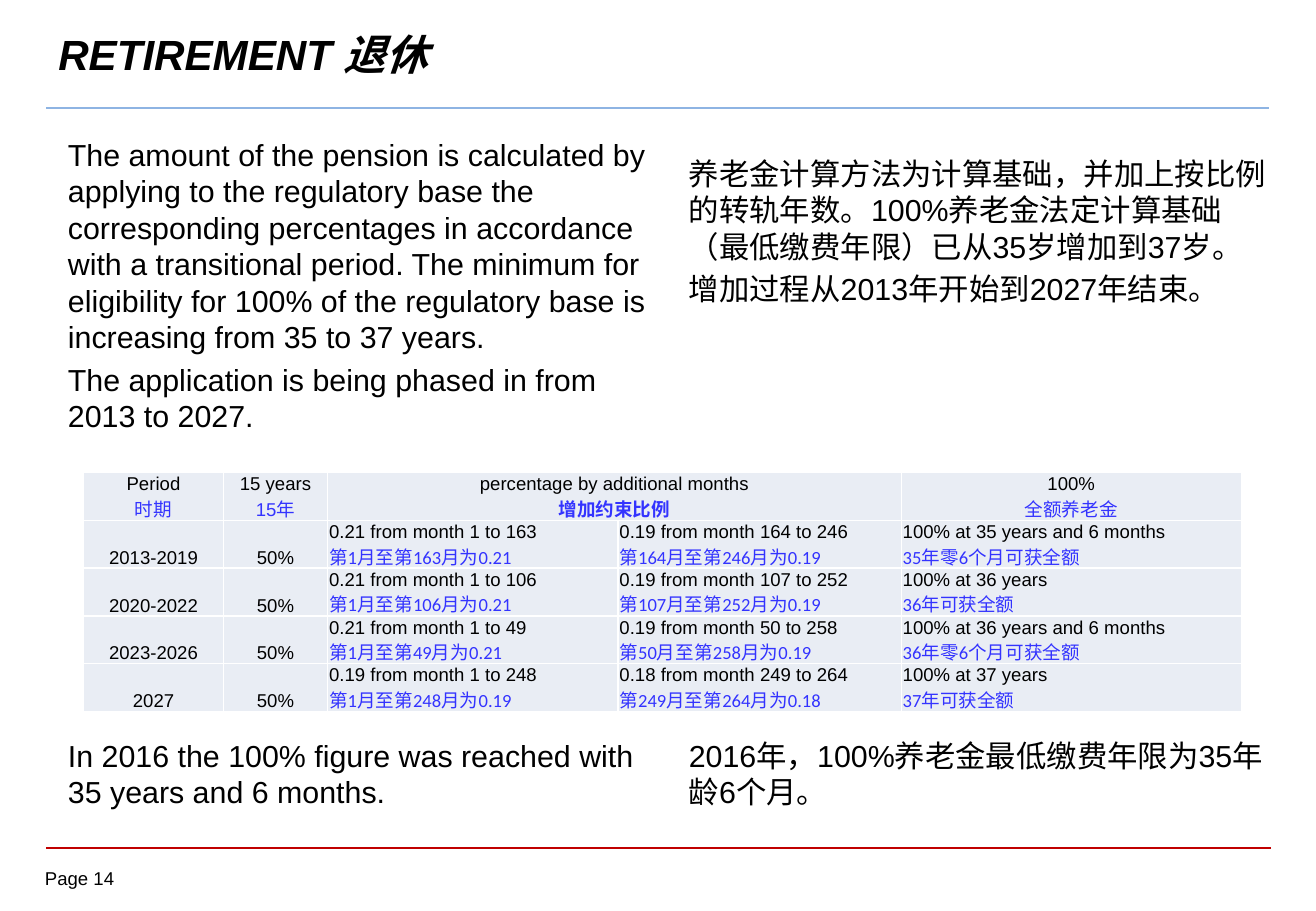
from lxml import etree
from pptx import Presentation
from pptx.dml.color import RGBColor
from pptx.enum.shapes import MSO_CONNECTOR
from pptx.enum.text import MSO_ANCHOR, PP_ALIGN
from pptx.oxml.ns import qn
from pptx.util import Cm, Pt

STRAIGHT = MSO_CONNECTOR.STRAIGHT
TOP, MIDDLE, BOTTOM = MSO_ANCHOR.TOP, MSO_ANCHOR.MIDDLE, MSO_ANCHOR.BOTTOM
LEFT, CENTER = PP_ALIGN.LEFT, PP_ALIGN.CENTER
BLACK, BLUE, WHITE, CELL_FILL = "000000", "3333FF", "FFFFFF", "E9EDF4"
ARIAL, CALIBRI = "Arial", "Calibri"

# Content
TITLE = "RETIREMENT 退休"
PAGE = "Page 14"
BODY_WIDTH = 12.6
BODY_TEXTS = [  # left, top, height, paragraphs
    (1.17, 2.72, 6.7, [
        "The amount of the pension is calculated by applying to the regulatory "
        "base the corresponding percentages in accordance with a transitional "
        "period. The minimum for eligibility for 100% of the regulatory base is "
        "increasing from 35 to 37 years.",
        "The application is being phased in from 2013 to 2027."]),
    (14.15, 3.12, 3.6, [
        "养老金计算方法为计算基础，并加上按比例的转轨年数。100%养老金法定计算基础"
        "（最低缴费年限）已从35岁增加到37岁。",
        "增加过程从2013年开始到2027年结束。"]),
    (1.17, 15.29, 1.8, ["In 2016 the 100% figure was reached with 35 years and 6 months."]),
    (14.15, 15.29, 1.8, ["2016年，100%养老金最低缴费年限为35年龄6个月。"]),
]
RULES = [  # right end, height on the slide, colour, weight
    (26.52, 2.26, "8EB4E3", 1.5),
    (26.57, 17.73, "C00000", 1),
]
COLUMN_WIDTHS = [2.92, 2.18, 6.07, 5.92, 7.11]
ROW_HEIGHT = 1
HEADERS = [  # column, English, Chinese, Chinese font, Chinese bold
    (0, "Period", "时期", ARIAL, False),
    (1, "15 years", "15年", ARIAL, False),
    (2, "percentage by additional months", "增加约束比例", CALIBRI, True),
    (4, "100%", "全额养老金", ARIAL, False),
]
PERIODS = [  # period, two (rate, first month, last month), full pension
    ("2013-2019", ("0.21", 1, 163), ("0.19", 164, 246),
     "100% at 35 years and 6 months", "35年零6个月可获全额"),
    ("2020-2022", ("0.21", 1, 106), ("0.19", 107, 252),
     "100% at 36 years", "36年可获全额"),
    ("2023-2026", ("0.21", 1, 49), ("0.19", 50, 258),
     "100% at 36 years and 6 months", "36年零6个月可获全额"),
    ("2027", ("0.19", 1, 248), ("0.18", 249, 264),
     "100% at 37 years", "37年可获全额"),
]


def color(value):
    return RGBColor.from_string(value)


def add_run(paragraph, text, size, font=ARIAL, fill=BLACK, bold=False, italic=False):
    run = paragraph.add_run()
    run.text = text
    run.font.name, run.font.size = font, Pt(size)
    run.font.bold, run.font.italic = bold, italic
    run.font.color.rgb = color(fill)


def add_box(slide, left, top, width, height, anchor=TOP):
    frame = slide.shapes.add_textbox(Cm(left), Cm(top), Cm(width), Cm(height)).text_frame
    frame.word_wrap = True
    frame.vertical_anchor = anchor
    return frame


def next_paragraph(frame, index):
    return frame.add_paragraph() if index else frame.paragraphs[0]


def add_rule(slide, right, height, fill, weight):
    rule = slide.shapes.add_connector(STRAIGHT, Cm(0.97), Cm(height), Cm(right), Cm(height))
    rule.line.color.rgb = color(fill)
    rule.line.width = Pt(weight)
    etree.SubElement(rule._element.spPr, qn("a:effectLst"))


def style_cell(cell):
    # Borders come before the fill in the cell properties
    properties = cell._tc.get_or_add_tcPr()
    for side in ("a:lnL", "a:lnR", "a:lnT", "a:lnB"):
        border = etree.SubElement(properties, qn(side), w=str(Pt(1)))
        solid = etree.SubElement(border, qn("a:solidFill"))
        etree.SubElement(solid, qn("a:srgbClr"), val=WHITE)
    cell.fill.solid()
    cell.fill.fore_color.rgb = color(CELL_FILL)
    cell.vertical_anchor = BOTTOM
    cell.margin_left = cell.margin_right = cell.margin_top = Cm(0.03)
    cell.margin_bottom = 0


def write_cell(cell, alignment, english, chinese=None, font=CALIBRI, bold=False):
    paragraph = cell.text_frame.paragraphs[0]
    paragraph.alignment = alignment
    add_run(paragraph, english, 11)
    if chinese:
        paragraph = cell.text_frame.add_paragraph()
        paragraph.alignment = alignment
        add_run(paragraph, chinese, 11, font, BLUE, bold)


def add_pension_table(slide):
    row_count = len(PERIODS) + 1
    table = slide.shapes.add_table(
        row_count, len(COLUMN_WIDTHS), Cm(1.75), Cm(9.88),
        Cm(sum(COLUMN_WIDTHS)), Cm(ROW_HEIGHT * row_count)).table
    table.first_row = table.horz_banding = False
    for column, width in zip(table.columns, COLUMN_WIDTHS):
        column.width = Cm(width)
    for row in table.rows:
        row.height = Cm(ROW_HEIGHT)
    for cell in table.iter_cells():
        style_cell(cell)

    table.cell(0, 2).merge(table.cell(0, 3))
    for column, english, chinese, font, bold in HEADERS:
        write_cell(table.cell(0, column), CENTER, english, chinese, font, bold)
    for row, (period, early, late, english, chinese) in enumerate(PERIODS, 1):
        write_cell(table.cell(row, 0), CENTER, period)
        write_cell(table.cell(row, 1), CENTER, "50%")
        for column, (rate, first, last) in enumerate((early, late), 2):
            write_cell(table.cell(row, column), LEFT,
                       f"{rate} from month {first} to {last}",
                       f"第{first}月至第{last}月为{rate}")
        write_cell(table.cell(row, 4), LEFT, english, chinese)


def main():
    presentation = Presentation()
    presentation.slide_width, presentation.slide_height = Cm(27.51), Cm(19.05)
    slide = presentation.slides.add_slide(presentation.slide_layouts[6])

    # Rules, title and page number
    for rule in RULES:
        add_rule(slide, *rule)
    title = add_box(slide, 0.97, 0.23, 25.2, 1.8, MIDDLE)
    add_run(title.paragraphs[0], TITLE, 25, bold=True, italic=True)
    page = add_box(slide, 0.94, 18.14, 1.85, 0.56)
    page.margin_left = page.margin_right = page.margin_top = page.margin_bottom = 0
    add_run(page.paragraphs[0], PAGE, 11)

    # English and Chinese text
    for left, top, height, texts in BODY_TEXTS:
        frame = add_box(slide, left, top, BODY_WIDTH, height)
        for index, text in enumerate(texts):
            paragraph = next_paragraph(frame, index)
            paragraph.line_spacing = Pt(21.6)
            if index:
                paragraph.space_before = Pt(3.6)
            add_run(paragraph, text, 18)

    add_pension_table(slide)
    presentation.save("out.pptx")


if __name__ == "__main__":
    main()
